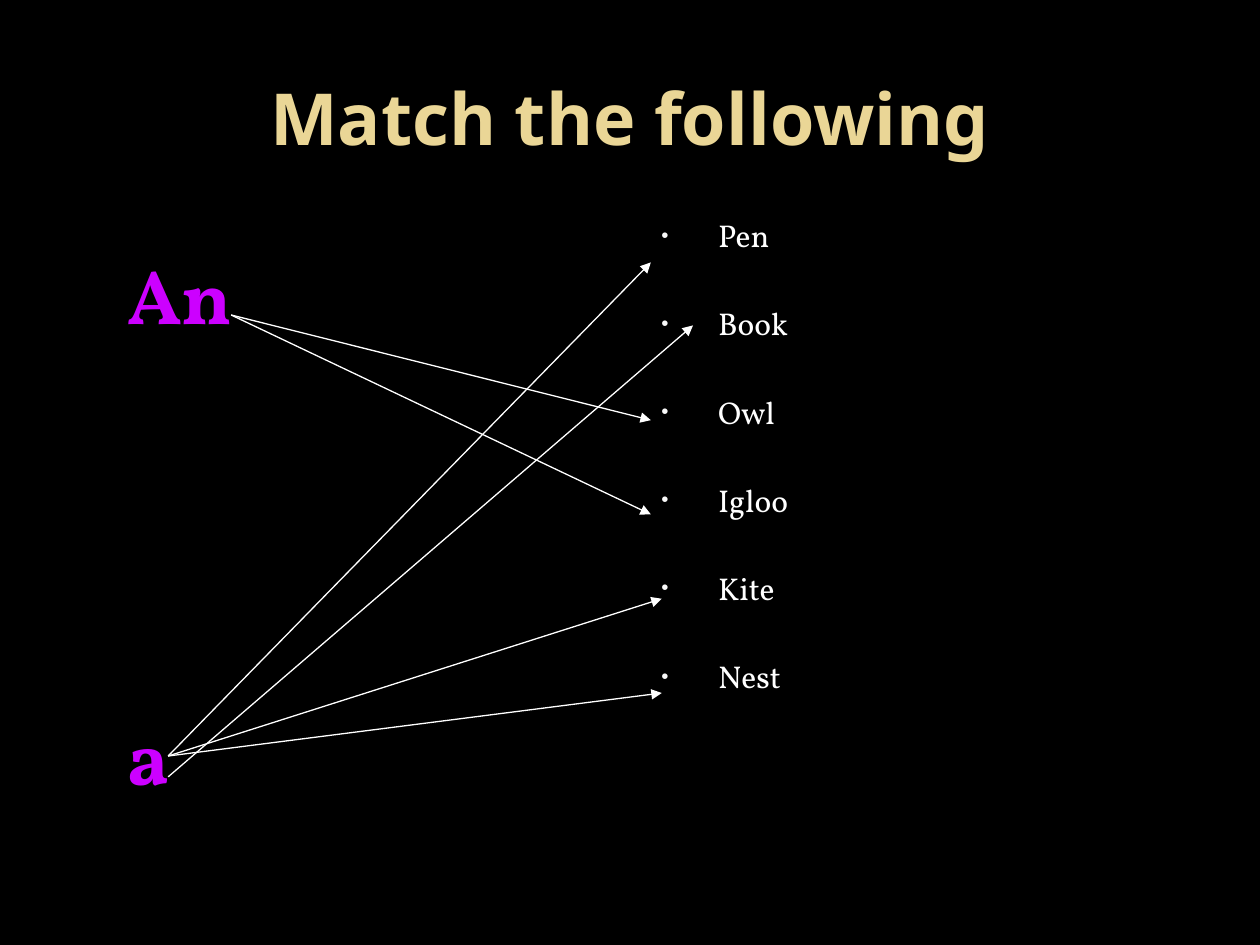
"""Build the slide on which the articles are matched with nouns."""
from lxml import etree
from pptx import Presentation
from pptx import util as u
from pptx.dml.color import RGBColor
from pptx.enum import shapes, text
from pptx.oxml.ns import qn

HEADING = "Match the following"
ARTICLES = ["An", "a"]
NOUNS = ["Pen", "Book", "Owl", "Igloo", "Kite", "Nest"]
AN_START, A_START, A_LOWER_START = (4.66, 6.35), (3.39, 15.24), (3.39, 15.66)
MATCHES = [
    (A_START, (13.12, 5.29)),
    (A_LOWER_START, (13.97, 6.56)),
    (AN_START, (13.12, 8.47)),
    (AN_START, (13.12, 10.37)),
    (A_START, (13.34, 12.07)),
    (A_START, (13.34, 13.97)),
]


def paint(color_format, color):
    color_format.rgb = RGBColor.from_string(color)


def place(part, left, top, width, height):
    part.left, part.top = u.Cm(left), u.Cm(top)
    part.width, part.height = u.Cm(width), u.Cm(height)


def write(part, lines, *, font, size, color, bold=False, gap=0,
          align=text.PP_ALIGN.LEFT, anchor=text.MSO_ANCHOR.TOP,
          fit=text.MSO_AUTO_SIZE.NONE):
    frame = part.text_frame
    frame.text = "\n".join(lines)
    frame.word_wrap, frame.auto_size, frame.vertical_anchor = True, fit, anchor
    for index, paragraph in enumerate(frame.paragraphs):
        paragraph.alignment = align
        paragraph.space_before = u.Pt(gap if index else 0)
        for run in paragraph.runs:
            run.font.name, run.font.size, run.font.bold = font, u.Pt(size), bold
            paint(run.font.color, color)


def add_bullets(part, color, percent, indent, hanging):
    for paragraph in part.text_frame.paragraphs:
        props = paragraph._p.get_or_add_pPr()
        props.set("marL", str(u.Cm(indent)))
        props.set("indent", str(-u.Cm(hanging)))
        bullet_color = etree.SubElement(props, qn("a:buClr"))
        etree.SubElement(bullet_color, qn("a:srgbClr"), val=color)
        etree.SubElement(props, qn("a:buSzPct"), val=str(percent * 1000))
        etree.SubElement(props, qn("a:buChar"), char="•")


def add_arrow(slide, start, end):
    arrow = slide.shapes.add_connector(
        shapes.MSO_CONNECTOR.STRAIGHT, *(u.Cm(value) for value in start + end))
    arrow.line.width = u.Pt(0.75)
    paint(arrow.line.color, "FFFFFF")
    etree.SubElement(arrow.line._get_or_add_ln(), qn("a:tailEnd"), type="triangle")
    etree.SubElement(arrow._element.spPr, qn("a:effectLst"))


def main():
    deck = Presentation()
    deck.slide_width, deck.slide_height = u.Cm(25.4), u.Cm(19.05)
    slide = deck.slides.add_slide(deck.slide_layouts[1])
    slide.background.fill.solid()
    paint(slide.background.fill.fore_color, "000000")

    heading, nouns = slide.placeholders
    place(heading, 1.27, 0.76, 22.86, 3.18)
    write(heading, [HEADING], font="Noto Sans", size=41, color="EAD696", bold=True,
          align=text.PP_ALIGN.CENTER, anchor=text.MSO_ANCHOR.MIDDLE)

    place(nouns, 12.7, 4.23, 11.23, 11.63)
    write(nouns, NOUNS, font="Vollkorn", size=18, color="FFFFFF", gap=28.8)
    add_bullets(nouns, "F9F9F9", 65, indent=1.52, hanging=1.14)

    articles = slide.shapes.add_textbox(0, 0, 0, 0)
    place(articles, 2.32, 4.86, 2.95, 11.43)
    write(articles, ARTICLES, font="Vollkorn", size=44, color="CC00FF", bold=True,
          gap=211, fit=text.MSO_AUTO_SIZE.SHAPE_TO_FIT_TEXT)

    for start, end in MATCHES:
        add_arrow(slide, start, end)
    deck.save("out.pptx")


if __name__ == "__main__":
    main()
